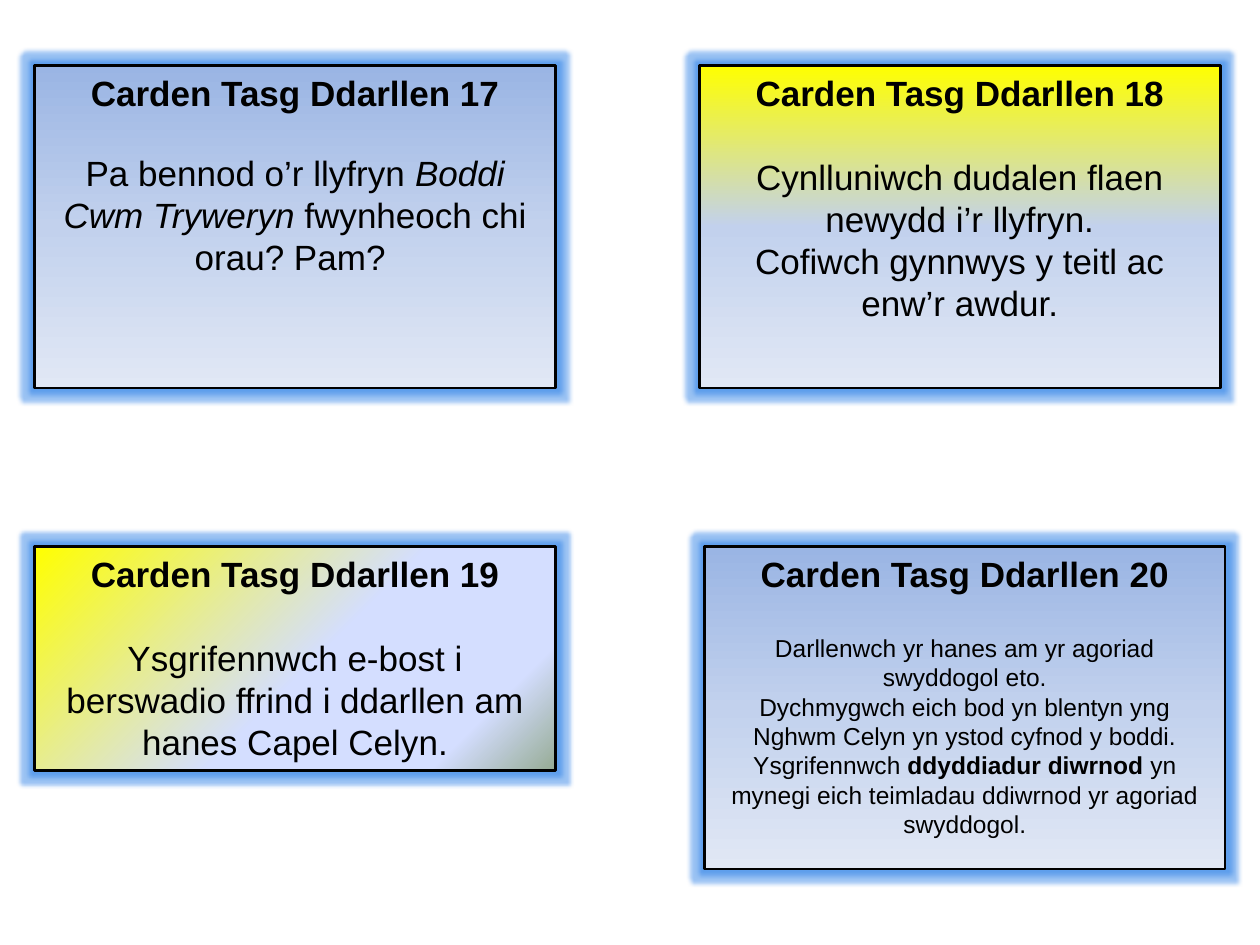
from dataclasses import dataclass

from lxml.etree import SubElement
from pptx import Presentation
from pptx.dml.color import RGBColor
from pptx.enum.shapes import MSO_SHAPE
from pptx.enum.text import MSO_ANCHOR as ANCHOR, MSO_AUTO_SIZE as AUTO, PP_ALIGN as ALIGN
from pptx.oxml.ns import qn
from pptx.util import Cm, Pt

BLACK = RGBColor(0x00, 0x00, 0x00)
YELLOW = RGBColor(0xFF, 0xFF, 0x00)
BLUE = RGBColor(0x9A, 0xB5, 0xE4)
MID_BLUE = RGBColor(0xC2, 0xD1, 0xED)
PALE_BLUE = RGBColor(0xE1, 0xE8, 0xF5)
LILAC = RGBColor(0xD4, 0xDE, 0xFF)
SAGE = RGBColor(0x96, 0xAB, 0x94)
GLOW = RGBColor(0x07, 0x69, 0xE3)

CARD_W, CARD_H, SHORT_H = 10.5, 6.5, 4.52
LEFT, TOP, BOTTOM = 0.7, 1.32, 11.02

# Gradients: (position in percent, colour)
BLUE_FADE = [(0, BLUE), (50, MID_BLUE), (100, PALE_BLUE)]
YELLOW_FADE = [(0, YELLOW), (50, MID_BLUE), (100, PALE_BLUE)]
DIAGONAL_FADE = [(0, YELLOW), (53, LILAC), (83, LILAC), (100, SAGE)]

BOLD, ITALIC = {"bold": True}, {"italic": True}


@dataclass
class Card:
    number: int
    left: float
    top: float
    stops: list
    body: list  # paragraphs, each a list of (text, format) runs
    height: float = CARD_H
    angle: int = 90  # clockwise
    size: int = 20
    gap: float = 24
    grow: bool = False


CARDS = [
    Card(17, LEFT, TOP, BLUE_FADE, gap=21.7, body=[
        [("Pa bennod o’r llyfryn ", {}), ("Boddi Cwm Tryweryn ", ITALIC),
         ("fwynheoch chi orau? Pam? ", {})]]),
    Card(19, LEFT, BOTTOM, DIAGONAL_FADE, height=SHORT_H, angle=45, grow=True, body=[
        [("Ysgrifennwch e-bost i berswadio ffrind i ddarllen am hanes Capel Celyn.", {})]]),
    Card(18, 14.1, TOP, YELLOW_FADE, body=[
        [("Cynlluniwch dudalen flaen newydd i’r llyfryn.", {})],
        [("Cofiwch gynnwys y teitl ac enw’r awdur.", {})]]),
    Card(20, 14.2, BOTTOM, BLUE_FADE, size=14, gap=21.7, body=[
        [("Darllenwch yr hanes am yr agoriad swyddogol eto.", {})],
        [("Dychmygwch eich bod yn blentyn yng Nghwm Celyn yn ystod cyfnod y boddi.", {})],
        [("Ysgrifennwch ", {}), ("ddyddiadur diwrnod ", BOLD),
         ("yn mynegi eich teimladau ddiwrnod yr agoriad swyddogol.", {})]]),
]


def add_color(parent, color: RGBColor):
    return SubElement(parent, qn("a:srgbClr"), val=str(color))


def set_gradient(sp, stops: list, angle: int) -> None:
    sp.fill.gradient()
    sp.fill.gradient_angle = 360 - angle
    gs_lst = sp._element.spPr.find(".//" + qn("a:gsLst"))
    for gs in list(gs_lst):
        gs_lst.remove(gs)
    for pos, color in stops:
        add_color(SubElement(gs_lst, qn("a:gs"), pos=str(pos * 1000)), color)


def set_glow(sp, radius: Pt) -> None:
    sp.shadow.inherit = False
    effects = sp._element.spPr.find(qn("a:effectLst"))
    color = add_color(SubElement(effects, qn("a:glow"), rad=str(int(radius))), GLOW)
    SubElement(color, qn("a:alpha"), val="40000")


def add_runs(p, runs: list, size: int) -> None:
    p.alignment = ALIGN.CENTER
    for text, extra in runs:
        r = p.add_run()
        r.text = text
        r.font.color.rgb = BLACK
        fmt = {"name": "Arial", "size": Pt(size), "bold": False, "italic": False, **extra}
        for key, value in fmt.items():
            setattr(r.font, key, value)


def add_card(slide, card: Card) -> None:
    sp = slide.shapes.add_shape(MSO_SHAPE.RECTANGLE, Cm(card.left), Cm(card.top),
                                Cm(CARD_W), Cm(card.height))
    sp.name = f"Carden {card.number}"
    set_gradient(sp, card.stops, card.angle)
    sp.line.color.rgb = BLACK
    sp.line.width = Pt(1.5)
    set_glow(sp, Pt(5))

    tf = sp.text_frame
    tf.word_wrap = True
    tf.vertical_anchor = ANCHOR.TOP
    tf.auto_size = AUTO.SHAPE_TO_FIT_TEXT if card.grow else AUTO.NONE
    title = tf.paragraphs[0]
    add_runs(title, [(f"Carden Tasg Ddarllen {card.number}", BOLD)], 20)
    title.space_after = Pt(card.gap)
    for runs in card.body:
        add_runs(tf.add_paragraph(), runs, card.size)


def main() -> None:
    prs = Presentation()
    prs.slide_width, prs.slide_height = Cm(25.4), Cm(19.05)
    slide = prs.slides.add_slide(prs.slide_layouts[6])
    for card in CARDS:
        add_card(slide, card)
    prs.save("out.pptx")


if __name__ == "__main__":
    main()
